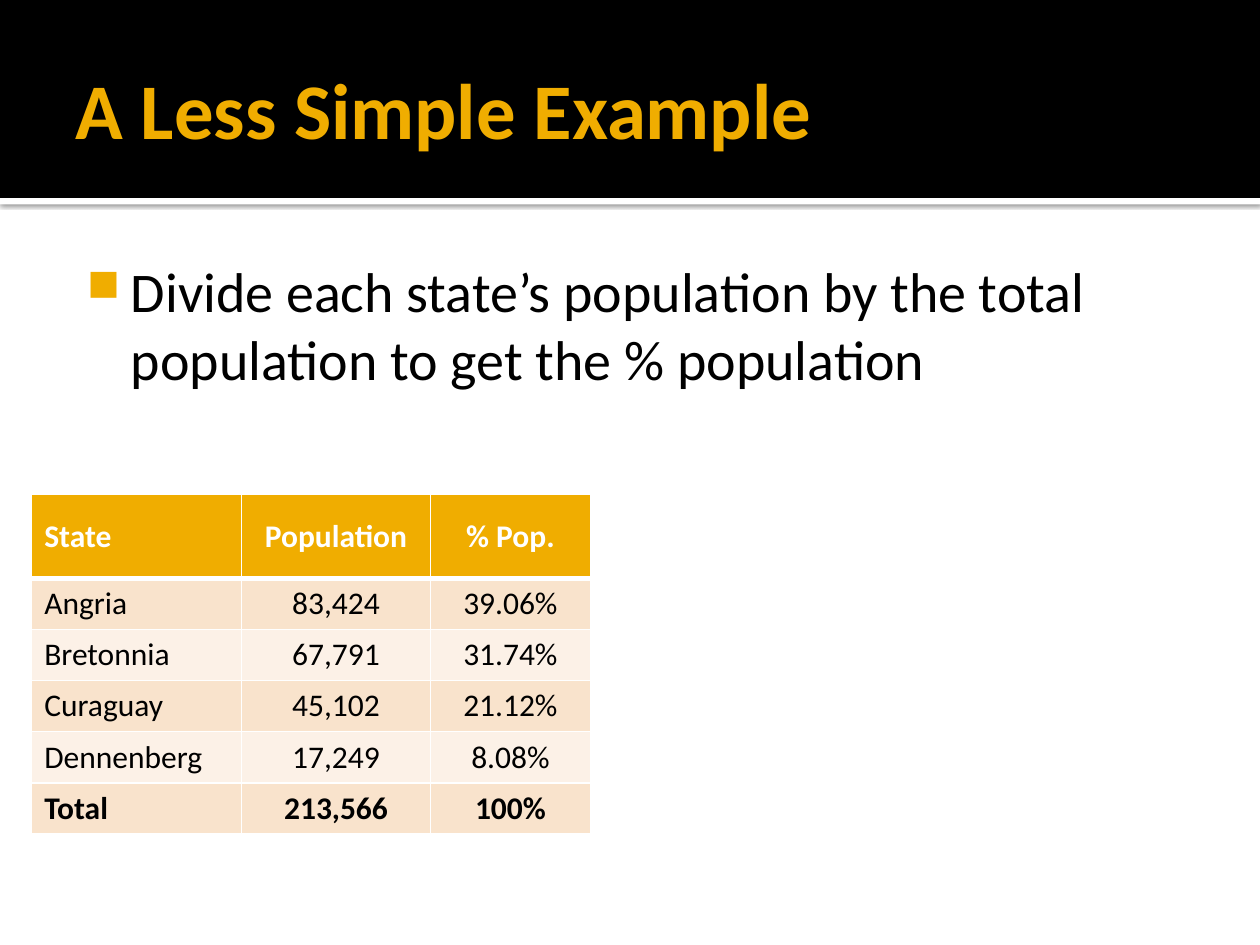
import lxml.etree
import pptx
import pptx.dml.color
import pptx.enum.shapes
import pptx.enum.text
import pptx.oxml
import pptx.oxml.ns
import pptx.util

Cm, Pt = pptx.util.Cm, pptx.util.Pt
ANCHOR, ALIGN = pptx.enum.text.MSO_ANCHOR, pptx.enum.text.PP_ALIGN
NS = pptx.oxml.ns.nsdecls("a")
GOLD, WHITE, BLACK = "F0AD00", "FFFFFF", "000000"
BANDS = ["F9E3CC", "FCF1E7"]


def color(hex_code):
    return pptx.dml.color.RGBColor.from_string(hex_code)


def write(paragraph, text, size, hex_code, bold=False):
    run = paragraph.add_run()
    run.text = text
    for name, value in {"name": "Calibri", "size": Pt(size), "bold": bold}.items():
        setattr(run.font, name, value)
    run.font.color.rgb = color(hex_code)


deck = pptx.Presentation()
deck.slide_width, deck.slide_height = Cm(25.4), Cm(19.05)
slide = deck.slides.add_slide(deck.slide_layouts[6])

# Header band with a shadowed white strip under it
for top, height, fill in [(3.99, 0.13, WHITE), (0, 3.99, BLACK)]:
    band = slide.shapes.add_shape(
        pptx.enum.shapes.MSO_SHAPE.RECTANGLE, Cm(0), Cm(top), Cm(25.4), Cm(height))
    band.shadow.inherit = False
    band.fill.solid()
    band.fill.fore_color.rgb = color(fill)
    band.line.fill.background()
    if fill == WHITE:
        effects = band._element.spPr.find(pptx.oxml.ns.qn("a:effectLst"))
        effects.append(pptx.oxml.parse_xml(
            f'<a:outerShdw {NS} blurRad="{Pt(2.5)}" dist="{Pt(0.8)}" dir="5400000" '
            f'algn="tl" rotWithShape="0"><a:srgbClr val="{BLACK}">'
            '<a:alpha val="60000"/></a:srgbClr></a:outerShdw>'))

# Title and bullet
title = slide.shapes.add_textbox(Cm(1.27), Cm(0.43), Cm(22.86), Cm(3.48)).text_frame
body = slide.shapes.add_textbox(Cm(1.27), Cm(4.93), Cm(22.86), Cm(12.85)).text_frame
frame_formats = [
    (title, {"word_wrap": True, "vertical_anchor": ANCHOR.MIDDLE, "margin_left": Cm(0.25),
             "margin_top": Cm(0.13), "margin_right": Cm(0.13), "margin_bottom": Cm(0.13)}),
    (body, {"word_wrap": True, "vertical_anchor": ANCHOR.TOP, "margin_left": Cm(0.15),
            "margin_top": Cm(0.25), "margin_right": Cm(0.25), "margin_bottom": Cm(0.13)}),
]
for frame, formats in frame_formats:
    for name, value in formats.items():
        setattr(frame, name, value)

write(title.paragraphs[0], "A Less Simple Example", 45, GOLD, True)
instruction = body.paragraphs[0]
write(instruction,
      "Divide each state’s population by the total population to get the % population",
      32, BLACK)
bullet = instruction._p.get_or_add_pPr()
bullet.set("marL", str(Cm(1.22)))
bullet.set("indent", str(-Cm(0.89)))
for xml in [f'<a:buClr {NS}><a:srgbClr val="{GOLD}"/></a:buClr>',
            f'<a:buSzPct {NS} val="80000"/>',
            f'<a:buChar {NS} char="■"/>']:
    bullet.append(pptx.oxml.parse_xml(xml))

# Population table
states = [
    ("State", "Population", "% Pop."),
    ("Angria", "83,424", "39.06%"),
    ("Bretonnia", "67,791", "31.74%"),
    ("Curaguay", "45,102", "21.12%"),
    ("Dennenberg", "17,249", "8.08%"),
    ("Total", "213,566", "100%"),
]
population = slide.shapes.add_table(
    len(states), 3, Cm(0.64), Cm(9.96), Cm(11.26), Cm(6.85)).table
for column, width in zip(population.columns, [4.23, 3.81, 3.22]):
    column.width = Cm(width)
for row, height in zip(population.rows, [1.7] + [1.03] * 5):
    row.height = Cm(height)

for r, values in enumerate(states):
    header = r == 0
    for c, value in enumerate(values):
        cell = population.cell(r, c)
        centered = header or c == 2
        cell.vertical_anchor = ANCHOR.MIDDLE if centered else ANCHOR.TOP
        paragraph = cell.text_frame.paragraphs[0]
        paragraph.alignment = ALIGN.CENTER if c else ALIGN.LEFT
        write(paragraph, value, 18, WHITE if header else BLACK,
              header or r == len(states) - 1)
        borders = {"lnL": 1, "lnR": 1, "lnT": 3 if r == 1 else 1, "lnB": 3 if header else 1}
        for side, width in borders.items():
            cell._tc.get_or_add_tcPr().append(pptx.oxml.parse_xml(
                f'<a:{side} {NS} w="{Pt(width)}"><a:solidFill>'
                f'<a:srgbClr val="{WHITE}"/></a:solidFill></a:{side}>'))
        cell.fill.solid()
        cell.fill.fore_color.rgb = color(GOLD if header else BANDS[(r - 1) % 2])

deck.save("out.pptx")
